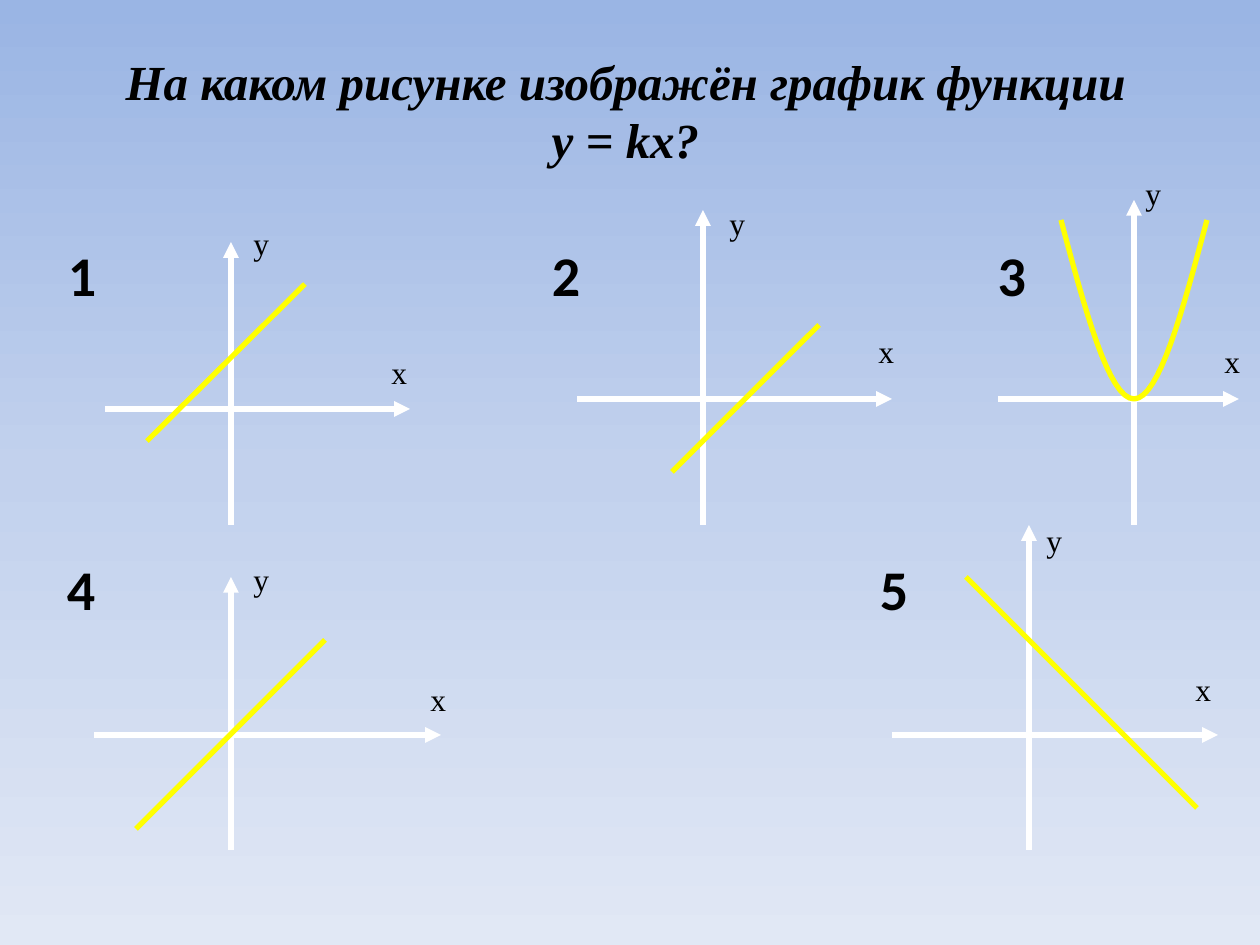
from copy import deepcopy
from dataclasses import dataclass

from lxml.etree import SubElement
from pptx import Presentation
from pptx.dml.color import RGBColor as RGB
from pptx.enum.shapes import MSO_CONNECTOR as CONN
from pptx.enum.text import MSO_ANCHOR as ANCHOR, PP_ALIGN as ALIGN
from pptx.oxml.ns import qn
from pptx.util import Inches, Pt

EMU_PER_PX = Inches(1) / 126


@dataclass(frozen=True)
class Theme:
    text: str = "000000"
    axis: str = "FFFFFF"
    curve: str = "FFFF00"
    backdrop: tuple = ((0, "9AB5E4"), (0.5, "C2D1ED"), (1, "E1E8F5"))
    serif: str = "Times New Roman"
    sans: str = "Calibri"
    title_size: int = 28
    number_size: int = 32
    label_size: int = 18
    stroke: int = 3


THEME = Theme()


@dataclass(frozen=True)
class Graph:
    """Axes run through origin; x_span and y_span are their start and tip."""
    number_at: tuple
    origin: tuple
    x_span: tuple
    y_span: tuple
    x_label: tuple
    y_label: tuple
    curve: tuple


# A line is given by its two ends, the parabola by half of it as a Bézier.
GRAPHS = (
    Graph((82, 274), (231, 409), (105, 410), (525, 242),
          (379, 347), (241, 218), ((147, 441), (305, 284))),
    Graph((566, 274), (703, 399), (577, 892), (525, 210),
          (866, 326), (717, 198), ((672, 472), (819, 325))),
    Graph((1012, 274), (1134, 399), (998, 1239), (525, 200),
          (1212, 336), (1133, 168),
          ((1061, 220), (1085, 310), (1109, 399), (1134, 399))),
    Graph((81, 588), (231, 735), (94, 441), (850, 577),
          (418, 674), (241, 554), ((136, 829), (325, 640))),
    Graph((894, 588), (1029, 735), (892, 1218), (850, 525),
          (1183, 664), (1034, 515), ((966, 577), (1197, 808))),
)


def px(n):
    return round(n * EMU_PER_PX)


def paint_background(s):
    fill = s.background.fill
    fill.gradient()
    fill.gradient_angle = 270
    stops = s._element.find(".//" + qn("a:gsLst"))
    stops.append(deepcopy(stops[-1]))
    for stop, (position, color) in zip(fill.gradient_stops, THEME.backdrop):
        stop.position = position
        stop.color.rgb = RGB.from_string(color)


def add_run(p, text, font, size, bold=False, italic=False):
    r = p.add_run()
    r.text = text
    r.font.name, r.font.size = font, Pt(size)
    r.font.bold, r.font.italic = bold, italic
    r.font.color.rgb = RGB.from_string(THEME.text)


def fill_title(s, lines):
    sp = s.shapes.title
    sp.left, sp.top, sp.width, sp.height = map(px, (20, 20, 1211, 180))
    tf = sp.text_frame
    tf.vertical_anchor = ANCHOR.MIDDLE
    p = tf.paragraphs[0]
    p.alignment = ALIGN.CENTER
    for i, line in enumerate(lines):
        if i:
            p.add_line_break()
        add_run(p, line, THEME.serif, THEME.title_size, bold=True, italic=True)


def add_number(s, number, center):
    w, h = 40, 68
    x, y = center
    sp = s.shapes.add_textbox(px(x - w / 2), px(y - h / 2), px(w), px(h))
    tf = sp.text_frame
    tf.margin_left = tf.margin_right = tf.margin_top = tf.margin_bottom = 0
    tf.word_wrap = True
    tf.vertical_anchor = ANCHOR.MIDDLE
    p = tf.paragraphs[0]
    p.alignment = ALIGN.CENTER
    add_run(p, str(number), THEME.sans, THEME.number_size, bold=True)


def add_axis_label(s, text, at):
    sp = s.shapes.add_textbox(*map(px, (*at, 42, 50)))
    sp.text_frame.word_wrap = False
    add_run(sp.text_frame.paragraphs[0], text, THEME.serif, THEME.label_size)


def style_line(line, color):
    line.color.rgb = RGB.from_string(color)
    line.width = Pt(THEME.stroke)


def add_line(s, start, end, color, arrow=False):
    c = s.shapes.add_connector(CONN.STRAIGHT, *map(px, (*start, *end)))
    style_line(c.line, color)
    if arrow:
        SubElement(c.line._get_or_add_ln(), qn("a:tailEnd"), type="triangle")
    SubElement(c._element.spPr, qn("a:effectLst"))


def bezier_point(points, t):
    weights = ((1 - t) ** 3, 3 * t * (1 - t) ** 2, 3 * t * t * (1 - t), t ** 3)
    return tuple(sum(w * v for w, v in zip(weights, axis))
                 for axis in zip(*points))


def add_parabola(s, half, steps=16):
    left = [bezier_point(half, i / steps) for i in range(steps + 1)]
    vertex_x = half[-1][0]
    right = [(2 * vertex_x - x, y) for x, y in reversed(left[:-1])]
    start, *rest = [(px(x), px(y)) for x, y in left + right]
    builder = s.shapes.build_freeform(*start)
    builder.add_line_segments(rest, close=False)
    sp = builder.convert_to_shape()
    sp.shadow.inherit = False
    sp.fill.background()
    style_line(sp.line, THEME.curve)


def add_graph(s, number, g):
    x0, y0 = g.origin
    add_number(s, number, g.number_at)
    add_line(s, (x0, g.y_span[0]), (x0, g.y_span[1]), THEME.axis, arrow=True)
    add_line(s, (g.x_span[0], y0), (g.x_span[1], y0), THEME.axis, arrow=True)
    if len(g.curve) == 2:
        add_line(s, *g.curve, THEME.curve)
    else:
        add_parabola(s, g.curve)
    add_axis_label(s, "х", g.x_label)
    add_axis_label(s, "у", g.y_label)


def main():
    prs = Presentation()
    prs.slide_width, prs.slide_height = px(1260), px(945)
    s = prs.slides.add_slide(prs.slide_layouts.get_by_name("Title Only"))
    paint_background(s)
    fill_title(s, ("На каком рисунке изображён график функции", "у = kx?"))
    for number, graph in enumerate(GRAPHS, start=1):
        add_graph(s, number, graph)
    prs.save("out.pptx")


if __name__ == "__main__":
    main()
